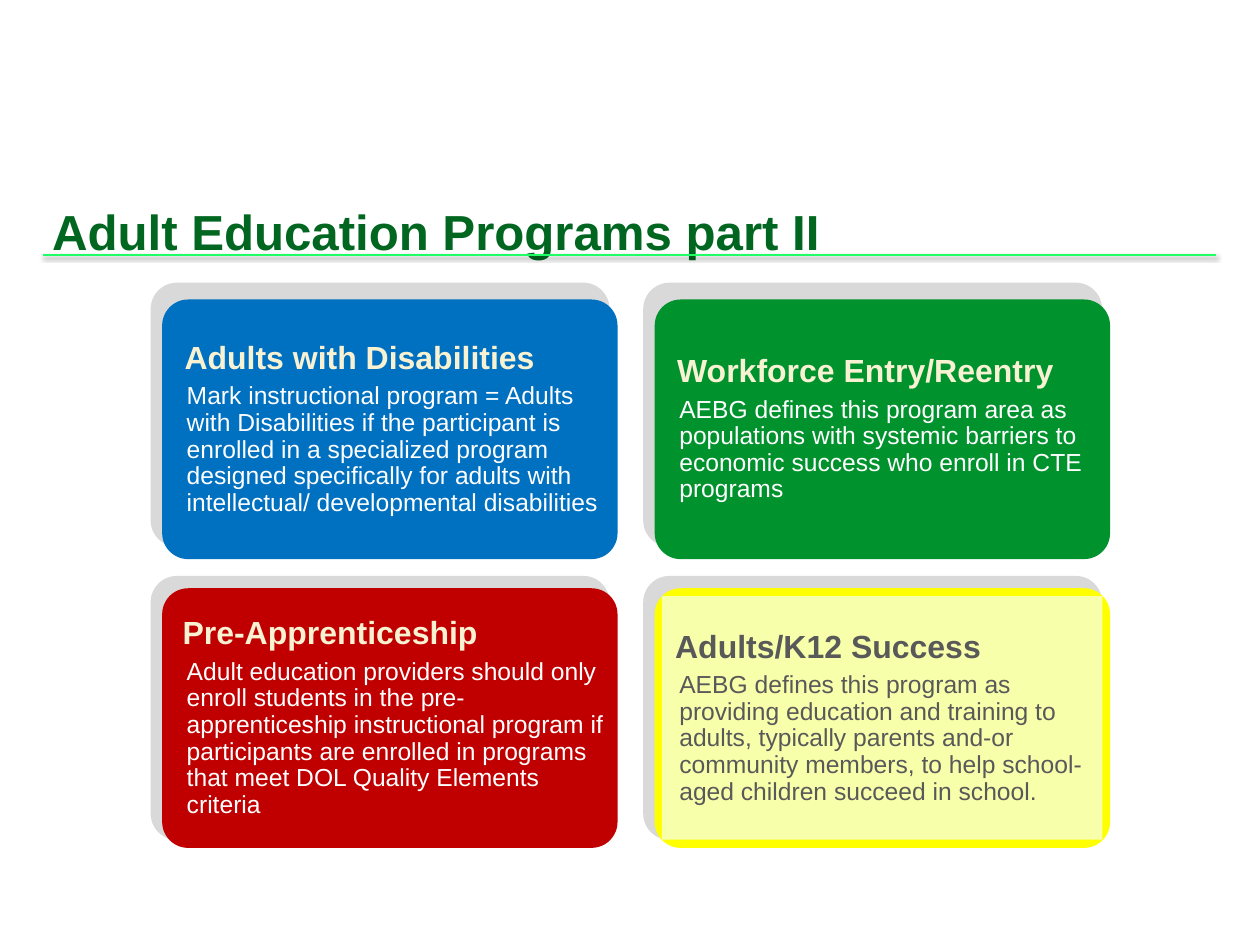
from dataclasses import dataclass
from typing import Any

from lxml import etree
from pptx import Presentation
from pptx import util as u
from pptx.dml import color
from pptx.enum import shapes, text
from pptx.oxml import ns

FONT = "Arial"
LEFTS = (122.4, 522.7)
BACK_TOPS = (229.7, 468)
FRONT_TOPS = (243.4, 478.1)
FRONT_SHIFT = 9.4
BACK_SIZE = (373, 214.6)
FRONT_SIZE = (370.1, 211)
PANEL_INSET = (6, 6.3)
PANEL_SIZE = (357.8, 198)


@dataclass
class Program:
    heading: str
    detail: str
    fill: str
    panel_fill: str
    heading_color: str = "F8F2D3"
    detail_color: str = "FFFFFF"
    heading_indent: float = 7.2


PROGRAMS = [
    Program(
        "Adults with Disabilities",
        "Mark instructional program = Adults with Disabilities if the participant is "
        "enrolled in a specialized program designed specifically for adults with "
        "intellectual/ developmental disabilities",
        "0070C0", "0070C0",
    ),
    Program(
        "Workforce Entry/Reentry",
        "AEBG defines this program area as populations with systemic barriers to "
        "economic success who enroll in CTE programs",
        "00922D", "00922D",
    ),
    Program(
        "Pre-Apprenticeship",
        "Adult education providers should only enroll students in the "
        "pre-apprenticeship instructional program if participants are enrolled in "
        "programs that meet DOL Quality Elements criteria",
        "C00000", "C00000", heading_indent=5.6,
    ),
    Program(
        "Adults/K12 Success",
        "AEBG defines this program as providing education and training to adults, "
        "typically parents and-or community members, to help school-aged children "
        "succeed in school.",
        "FFFF00", "F7FFAB", "595959", "595959", 5.6,
    ),
]


def rgb(value: str) -> color.RGBColor:
    return color.RGBColor.from_string(value)


def style_span(span: Any, size: float, hex_color: str, bold: bool) -> None:
    span.font.name = FONT
    span.font.size = u.Pt(size)
    span.font.bold = bold
    span.font.color.rgb = rgb(hex_color)


def add_block(parent: Any, kind: Any, left: float, top: float,
              size: tuple[float, float], fill: str) -> Any:
    block = parent.add_shape(kind, u.Pt(left), u.Pt(top), *map(u.Pt, size))
    block.shadow.inherit = False
    block.fill.solid()
    block.fill.fore_color.rgb = rgb(fill)
    block.line.fill.background()
    if kind == shapes.MSO_SHAPE.ROUNDED_RECTANGLE:
        block.adjustments[0] = 0.1
    return block


def write_program(panel: Any, program: Program) -> None:
    frame = panel.text_frame
    frame.word_wrap = True
    frame.vertical_anchor = text.MSO_ANCHOR.MIDDLE
    frame.margin_left = frame.margin_right = u.Pt(5)
    frame.margin_top = frame.margin_bottom = u.Pt(5)
    frame.text = f"{program.heading}\n{program.detail}"
    heading, detail = frame.paragraphs
    for para, indent in ((heading, program.heading_indent), (detail, 9)):
        para.alignment = text.PP_ALIGN.LEFT
        para.line_spacing = 0.9
        properties = para._p.get_or_add_pPr()
        properties.set("marL", str(int(u.Pt(indent))))
        properties.set("indent", "0")
    detail.space_before = u.Pt(6)
    style_span(heading.runs[0], 26, program.heading_color, True)
    style_span(detail.runs[0], 20, program.detail_color, False)


def add_card(page: Any, program: Program, row: int, column: int) -> None:
    rounded = shapes.MSO_SHAPE.ROUNDED_RECTANGLE
    left, top = LEFTS[column] + FRONT_SHIFT, FRONT_TOPS[row]
    add_block(page.shapes, rounded, LEFTS[column], BACK_TOPS[row], BACK_SIZE, "D9D9D9")
    group = page.shapes.add_group_shape().shapes
    add_block(group, rounded, left, top, FRONT_SIZE, program.fill)
    panel = add_block(group, shapes.MSO_SHAPE.RECTANGLE, left + PANEL_INSET[0],
                      top + PANEL_INSET[1], PANEL_SIZE, program.panel_fill)
    write_program(panel, program)


def add_title(page: Any) -> None:
    box = page.shapes.add_textbox(u.Pt(35.3), u.Pt(154.8), u.Pt(813.6), u.Pt(66.2))
    frame = box.text_frame
    frame.word_wrap = True
    frame.vertical_anchor = text.MSO_ANCHOR.MIDDLE
    frame.text = "Adult Education Programs part II"
    style_span(frame.paragraphs[0].runs[0], 40, "006620", True)


def add_title_rule(page: Any) -> None:
    rule = page.shapes.add_connector(shapes.MSO_CONNECTOR.STRAIGHT, u.Pt(35.3),
                                     u.Pt(207.4), u.Pt(988.6), u.Pt(207.4))
    rule.line.color.rgb = rgb("1FFF66")
    rule.line.width = u.Pt(2)
    effects = etree.SubElement(rule._element.spPr, ns.qn("a:effectLst"))
    shadow = etree.SubElement(effects, ns.qn("a:outerShdw"), blurRad=str(int(u.Pt(3))),
                              dist=str(int(u.Pt(2))), dir="5400000", rotWithShape="0")
    shade = etree.SubElement(shadow, ns.qn("a:srgbClr"), val="000000")
    etree.SubElement(shade, ns.qn("a:alpha"), val="50000")


def main() -> None:
    deck = Presentation()
    deck.slide_width, deck.slide_height = u.Pt(1024), u.Pt(768)
    page = deck.slides.add_slide(deck.slide_layouts[6])
    add_title(page)
    add_title_rule(page)
    for index, program in enumerate(PROGRAMS):
        add_card(page, program, *divmod(index, len(LEFTS)))
    deck.save("out.pptx")


if __name__ == "__main__":
    main()
